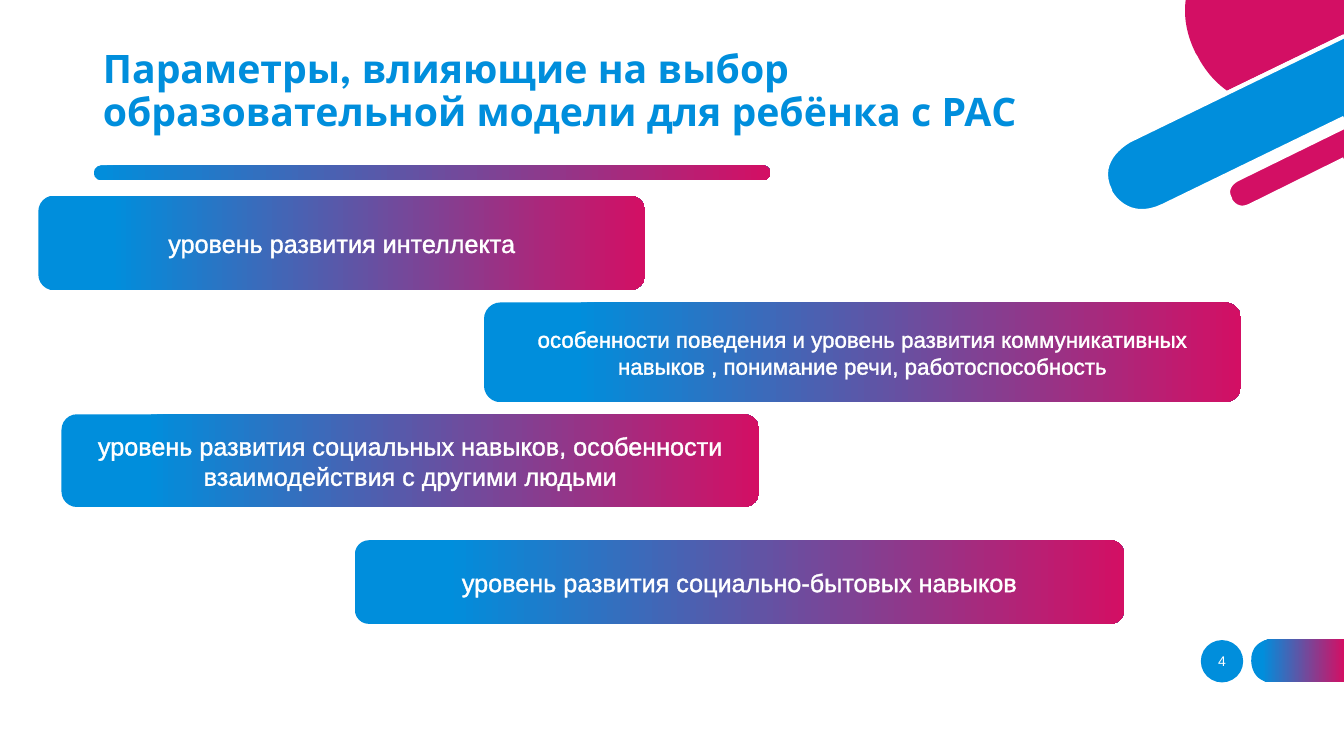
from dataclasses import dataclass

from lxml import etree
from pptx import Presentation
from pptx.dml.color import RGBColor
from pptx.enum.shapes import MSO_SHAPE
from pptx.enum.text import MSO_ANCHOR, MSO_AUTO_SIZE, PP_ALIGN
from pptx.oxml.ns import qn
from pptx.shapes.autoshape import Shape
from pptx.slide import Slide
from pptx.util import Inches, Pt

BLUE = RGBColor(0x00, 0x8E, 0xDC)
CRIMSON = RGBColor(0xD3, 0x0F, 0x64)
WHITE = RGBColor(0xFF, 0xFF, 0xFF)

ELLIPSE = MSO_SHAPE.OVAL
ROUNDED = MSO_SHAPE.ROUNDED_RECTANGLE
LEFT, CENTER = PP_ALIGN.LEFT, PP_ALIGN.CENTER
MIDDLE = MSO_ANCHOR.MIDDLE
FIXED_SIZE = MSO_AUTO_SIZE.NONE

BODY_FONT = "Arial"
TITLE_FONT = "League Spartan"
TITLE = "Параметры, влияющие на выбор образовательной модели для ребёнка с РАС"
CURVE_STEPS = 16

Box = tuple[float, float, float, float]
Point = tuple[float, float]


@dataclass
class Factor:
    box: Box
    text: str
    size: int = 18


@dataclass
class Ornament:
    """Outline in inches: pairs are corners, sextets are Bézier curves."""
    outline: list[tuple[float, ...]]
    color: RGBColor | None = None  # None means the gradient
    edged: bool = False


FACTORS = [
    Factor((0.38, 1.94, 6.02, 0.94), "уровень развития интеллекта"),
    Factor((4.8, 3, 7.51, 0.99),
           "особенности поведения и уровень развития коммуникативных "
           "навыков , понимание речи, работоспособность", 16),
    Factor((0.61, 4.11, 6.92, 0.92),
           "уровень развития социальных навыков, особенности "
           "взаимодействия с другими людьми"),
    Factor((3.52, 5.36, 7.63, 0.83), "уровень развития социально-бытовых навыков"),
]

ORNAMENTS = [
    # Tab beside the page number
    Ornament([(13.33, 6.34), (12.62, 6.34),
              (12.62, 6.34, 12.41, 6.34, 12.41, 6.55), (12.41, 6.56),
              (12.41, 6.56, 12.41, 6.77, 12.62, 6.77), (13.33, 6.77)]),
    # Circle segment, wide bar and narrow bar in the corner
    Ornament([(13.33, 0), (11.76, 0),
              (11.74, 0.15, 11.76, 0.33, 11.86, 0.53), (11.88, 0.56),
              (11.88, 0.56, 11.97, 0.76, 12.17, 0.9), (13.33, 0.34)], CRIMSON),
    Ornament([(13.33, 0.36), (11.21, 1.39),
              (11.21, 1.39, 10.85, 1.57, 11.01, 1.89), (11.01, 1.9),
              (11.01, 1.9, 11.17, 2.22, 11.54, 2.04), (13.33, 1.17)], BLUE, True),
    Ornament([(13.33, 1.26), (12.27, 1.78),
              (12.27, 1.78, 12.13, 1.85, 12.2, 1.97), (12.2, 1.98),
              (12.2, 1.98, 12.26, 2.11, 12.4, 2.04), (13.33, 1.58)], CRIMSON, True),
]


def paint(shape: Shape, color: RGBColor | None = None, start: float = 0.12) -> None:
    """Fill with one colour, or with the blue-to-crimson gradient."""
    shape.shadow.inherit = False
    shape.line.fill.background()
    if color is not None:
        shape.fill.solid()
        shape.fill.fore_color.rgb = color
        return
    shape.fill.gradient()
    shape.fill.gradient_angle = 0
    stops = zip(shape.fill.gradient_stops, (start, 1), (BLUE, CRIMSON))
    for stop, position, stop_color in stops:
        stop.position = position
        stop.color.rgb = stop_color


def write_text(shape: Shape, text: str, *, size: float, color: RGBColor = WHITE,
               font: str = BODY_FONT, bold: bool = False, align: PP_ALIGN = CENTER,
               spacing: float = 1.0, outline: float = 0) -> None:
    frame = shape.text_frame
    frame.word_wrap = True
    frame.auto_size = FIXED_SIZE
    frame.vertical_anchor = MIDDLE
    paragraph = frame.paragraphs[0]
    paragraph.alignment = align
    paragraph.line_spacing = spacing
    run = paragraph.add_run()
    run.text = text
    run.font.name = font
    run.font.size = Pt(size)
    run.font.bold = bold
    run.font.color.rgb = color
    if outline:
        line = etree.Element(qn("a:ln"), w=str(Pt(outline)))
        fill = etree.SubElement(line, qn("a:solidFill"))
        etree.SubElement(fill, qn("a:srgbClr"), val=str(color))
        run.font._element.insert(0, line)


def add_preset(slide: Slide, kind: MSO_SHAPE, box: Box) -> Shape:
    return slide.shapes.add_shape(kind, *map(Inches, box))


def curve_points(start: Point, curve: tuple[float, ...]) -> list[Point]:
    """Sample a cubic Bézier curve after its starting point."""
    controls = [start, curve[0:2], curve[2:4], curve[4:6]]
    points = []
    for step in range(1, CURVE_STEPS + 1):
        t = step / CURVE_STEPS
        weights = ((1 - t) ** 3, 3 * t * (1 - t) ** 2, 3 * t * t * (1 - t), t ** 3)
        x, y = (sum(w * c[axis] for w, c in zip(weights, controls)) for axis in (0, 1))
        points.append((x, y))
    return points


def add_ornament(slide: Slide, ornament: Ornament) -> None:
    points = [ornament.outline[0]]
    for part in ornament.outline[1:]:
        points += [part] if len(part) == 2 else curve_points(points[-1], part)
    corners = [(Inches(x), Inches(y)) for x, y in points]
    builder = slide.shapes.build_freeform(*corners[0])
    # An edged outline stays open along the slide's border
    builder.add_line_segments(corners[1:], close=not ornament.edged)
    shape = builder.convert_to_shape()
    paint(shape, ornament.color)
    if ornament.edged:
        shape.line.color.rgb = WHITE
        shape.line.width = Pt(3)


def main() -> None:
    presentation = Presentation()
    presentation.slide_width = Inches(13.33)
    presentation.slide_height = Inches(7.5)
    slide = presentation.slides.add_slide(presentation.slide_layouts[5])

    # Decoration
    for ornament in ORNAMENTS:
        add_ornament(slide, ornament)
    underline = add_preset(slide, ROUNDED, (0.93, 1.64, 6.71, 0.15))
    underline.adjustments[0] = 0.5
    paint(underline, start=0)

    # Page number
    paint(add_preset(slide, ELLIPSE, (11.91, 6.35, 0.42, 0.42)), BLUE)
    number = slide.shapes.add_textbox(*map(Inches, (11.82, 6.36, 0.6, 0.4)))
    write_text(number, "4", size=10)

    # Title
    title = slide.shapes.title
    title.left, title.top, title.width, title.height = map(
        Inches, (0.92, 0.4, 9.9, 1.03))
    write_text(title, TITLE, size=28, color=BLUE, font=TITLE_FONT, bold=True,
               align=LEFT, spacing=0.9)

    # Factors
    for factor in FACTORS:
        panel = add_preset(slide, ROUNDED, factor.box)
        paint(panel)
        write_text(panel, factor.text, size=factor.size, outline=1.45)

    presentation.save("out.pptx")


if __name__ == "__main__":
    main()
